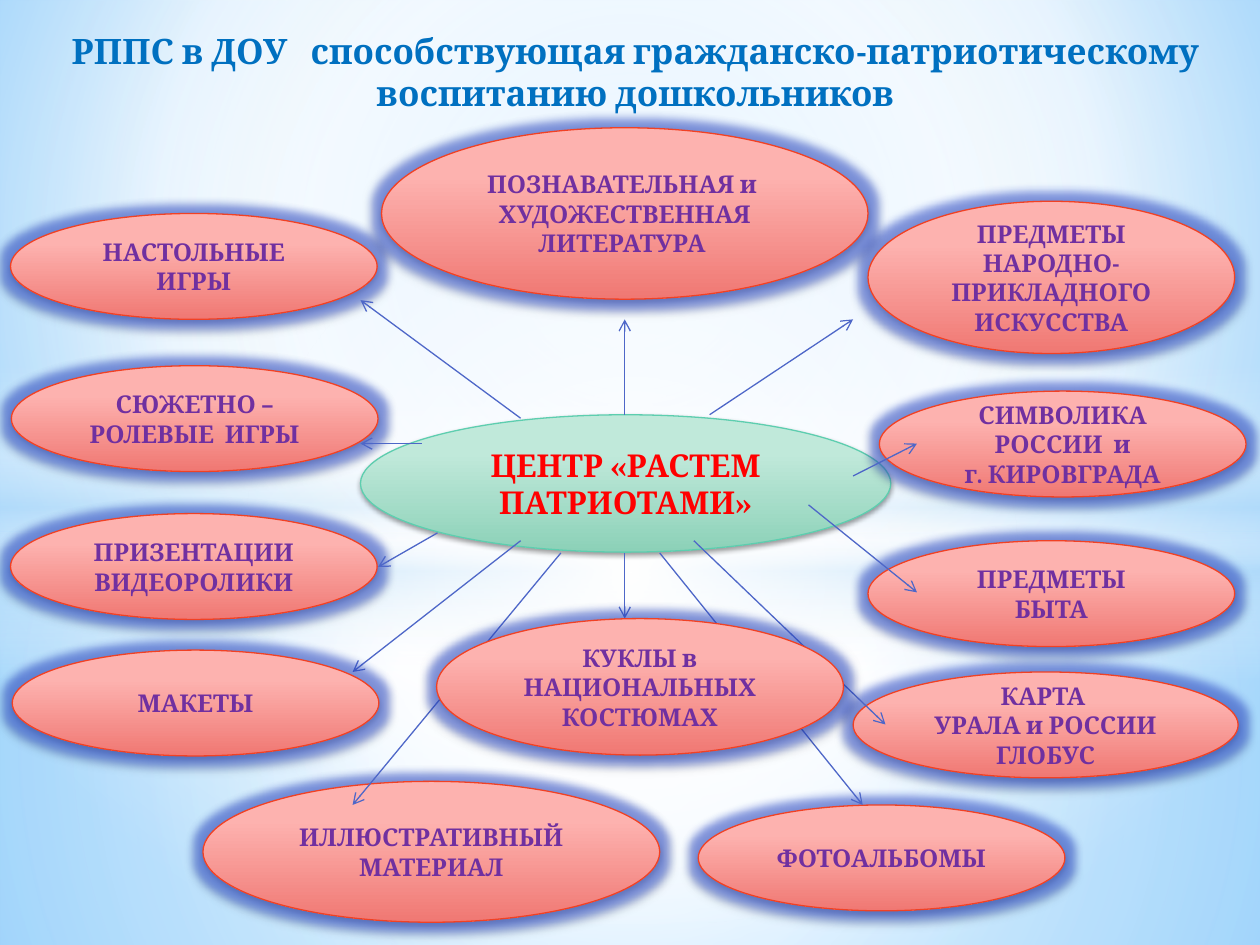
import pptx
import pptx.util
import pptx.dml.color
import pptx.enum.shapes
import pptx.enum.text
import pptx.oxml.ns
import lxml.etree

COLORS = {
    "sky": "9ED5FF", "deep_sky": "5BB9FF", "haze": "B4DCFA", "white": "FFFFFF",
    "title": "0070C0", "center_text": "FF0000", "topic_text": "7030A0",
    "center_light": "C0E9DA", "center_dark": "8CD1B8", "center_line": "5DCEAF",
    "topic_light": "FDB2AF", "topic_dark": "F07873", "topic_line": "F14124",
    "arrow": "4E67C8", "glow": "3557E0", "shadow": "000000",
}
FONT = "Cambria"
TITLE = "РППС в ДОУ   способствующая гражданско-патриотическому воспитанию дошкольников"
CENTER = ("ЦЕНТР «РАСТЕМ ПАТРИОТАМИ»", 206, 237, 303, 78.5)
TOPIC_SIZE = (209.5, 60.5)

PAGE_STOPS = [(0, "sky", 100), (60, "white", 100), (100, "deep_sky", 100)]
BACKDROPS = [
    ("RECTANGLE", (0, 304.5, 720, 235.5), "circle",
     [(0, "white", 91), (37, "white", 76), (100, "haze", 79)]),
    ("RECTANGLE", (0, 0, 720, 304.5), "circle",
     [(0, "white", 89), (48, "white", 62), (100, "haze", 79)]),
    ("RECTANGLE", (0, 209, 720, 180), "linear",
     [(0, "white", 0), (29, "white", 30), (45, "haze", 40),
      (55, "white", 26), (65, "haze", 60), (100, "white", 0)]),
    ("OVAL", (0, 126, 720, 402), "circle", [(0, "white", 100), (54, "white", 0)]),
]

BACK_TOPICS = [
    ("ФОТОАЛЬБОМЫ", 399, 460),
    ("КАРТА \nУРАЛА и РОССИИ\nГЛОБУС", 487.5, 384, 220, 60.5),
    ("ПРЕДМЕТЫ\nБЫТА", 496, 309),
    ("ПРЕДМЕТЫ\nНАРОДНО-ПРИКЛАДНОГО\nИСКУССТВА", 496, 115, 209.5, 87),
    ("СИМВОЛИКА\nРОССИИ  и\nг. КИРОВГРАДА", 502.5, 223.5),
    ("НАСТОЛЬНЫЕ\nИГРЫ", 6, 122),
    ("ПОЗНАВАТЕЛЬНАЯ и \nХУДОЖЕСТВЕННАЯ\nЛИТЕРАТУРА ", 218, 73, 278, 98),
    ("СЮЖЕТНО –\nРОЛЕВЫЕ  ИГРЫ", 6.5, 209),
    ("ПРИЗЕНТАЦИИ\nВИДЕОРОЛИКИ", 6, 293.5),
]
MIDDLE_TOPICS = [
    ("ИЛЛЮСТРАТИВНЫЙ\nМАТЕРИАЛ", 116, 446.5, 261, 80.5),
    ("МАКЕТЫ", 7, 371.5),
]
FRONT_TOPICS = [("КУКЛЫ в\vНАЦИОНАЛЬНЫХ\nКОСТЮМАХ", 249.5, 353.5, 232.5, 78)]

BACK_ARROWS = [
    (357, 237, 357, 182.5), (405.5, 237, 487.5, 182.5),
    (487.5, 272, 524, 253.5), (462, 288.5, 524, 338.5),
    (396.5, 309, 506, 414), (297.5, 309, 201.5, 384),
    (297.5, 239, 206, 171.5), (241, 253.5, 206, 253.5),
    (250, 304.5, 216, 324), (357, 316, 357, 353.5),
]
MIDDLE_ARROWS = [(320.5, 316, 201.5, 460), (377, 316, 493, 460)]

Pt = pptx.util.Pt
qn = pptx.oxml.ns.qn


def rgb(name):
    return pptx.dml.color.RGBColor.from_string(COLORS[name])


def add_element(parent, tag, **attributes):
    texts = {key: str(value) for key, value in attributes.items()}
    return lxml.etree.SubElement(parent, qn("a:" + tag), texts)


def add_color(parent, name, opacity):
    color = add_element(parent, "srgbClr", val=COLORS[name])
    if opacity < 100:
        add_element(color, "alpha", val=opacity * 1000)


def set_gradient(fill, owner, stops, kind, focus=(50, 50, 50, 50)):
    fill.gradient()
    gradient = next(owner.iter(qn("a:gradFill")))
    for child in list(gradient):
        gradient.remove(child)
    stop_list = add_element(gradient, "gsLst")
    for position, name, opacity in stops:
        add_color(add_element(stop_list, "gs", pos=position * 1000), name, opacity)
    if kind == "linear":
        add_element(gradient, "lin", ang=5400000, scaled=0)
    else:
        route = add_element(gradient, "path", path=kind)
        edges = {side: value * 1000 for side, value in zip("ltrb", focus)}
        add_element(route, "fillToRect", **edges)


def add_gradient_shape(page, preset, bounds, stops, kind):
    preset = getattr(pptx.enum.shapes.MSO_SHAPE, preset)
    shape = page.shapes.add_shape(preset, *map(Pt, bounds))
    shape.shadow.inherit = False
    set_gradient(shape.fill, shape.element.spPr, stops, kind)
    shape.line.fill.background()
    return shape


def write_text(shape, text, size, color):
    frame = shape.text_frame
    frame.word_wrap = True
    frame.text = text
    for para in frame.paragraphs:
        para.alignment = pptx.enum.text.PP_ALIGN.CENTER
        for span in para.runs:
            span.font.name = FONT
            span.font.size = Pt(size)
            span.font.bold = True
            span.font.color.rgb = rgb(color)


def add_oval(page, text, left, top, width, height, style, size, glow):
    stops = [(28, style + "_light", 100), (100, style + "_dark", 100)]
    oval = add_gradient_shape(page, "OVAL", (left, top, width, height), stops, "linear")
    oval.line.color.rgb = rgb(style + "_line")
    oval.line.width = Pt(0.75)
    effects = oval.element.spPr.find(qn("a:effectLst"))
    if glow:
        add_color(add_element(effects, "glow", rad=int(Pt(10))), "glow", 50)
    shadow = add_element(effects, "outerShdw", blurRad=int(Pt(3.1)),
                         dist=int(Pt(1.6)), dir=5400000, rotWithShape=0)
    add_color(shadow, "shadow", 38)
    oval.text_frame.vertical_anchor = pptx.enum.text.MSO_ANCHOR.MIDDLE
    write_text(oval, text, size, style + "_text")


def add_topics(page, topics):
    for text, left, top, *size in topics:
        width, height = size or TOPIC_SIZE
        add_oval(page, text, left, top, width, height, "topic", 14, True)


def add_arrows(page, arrows):
    for ends in arrows:
        arrow = page.shapes.add_connector(
            pptx.enum.shapes.MSO_CONNECTOR.STRAIGHT, *map(Pt, ends))
        arrow.line.color.rgb = rgb("arrow")
        arrow.line.width = Pt(0.75)
        properties = arrow.element.spPr
        add_element(properties.find(qn("a:ln")), "tailEnd", type="arrow")
        add_element(properties, "effectLst")


def main():
    deck = pptx.Presentation()
    deck.slide_width, deck.slide_height = Pt(720), Pt(540)
    page = deck.slides.add_slide(deck.slide_layouts[6])
    set_gradient(page.background.fill, page.element, PAGE_STOPS, "circle", (20, 10, 20, 60))
    for backdrop in BACKDROPS:
        preset, bounds, kind, stops = backdrop
        add_gradient_shape(page, preset, bounds, stops, kind)

    title = page.shapes.add_textbox(Pt(20), Pt(13.5), Pt(686), Pt(55.5))
    write_text(title, TITLE, 20, "title")
    title.text_frame.auto_size = pptx.enum.text.MSO_AUTO_SIZE.SHAPE_TO_FIT_TEXT

    add_oval(page, *CENTER, "center", 18, False)
    add_topics(page, BACK_TOPICS)
    add_arrows(page, BACK_ARROWS)
    add_topics(page, MIDDLE_TOPICS)
    add_arrows(page, MIDDLE_ARROWS)
    add_topics(page, FRONT_TOPICS)
    deck.save("out.pptx")


if __name__ == "__main__":
    main()
